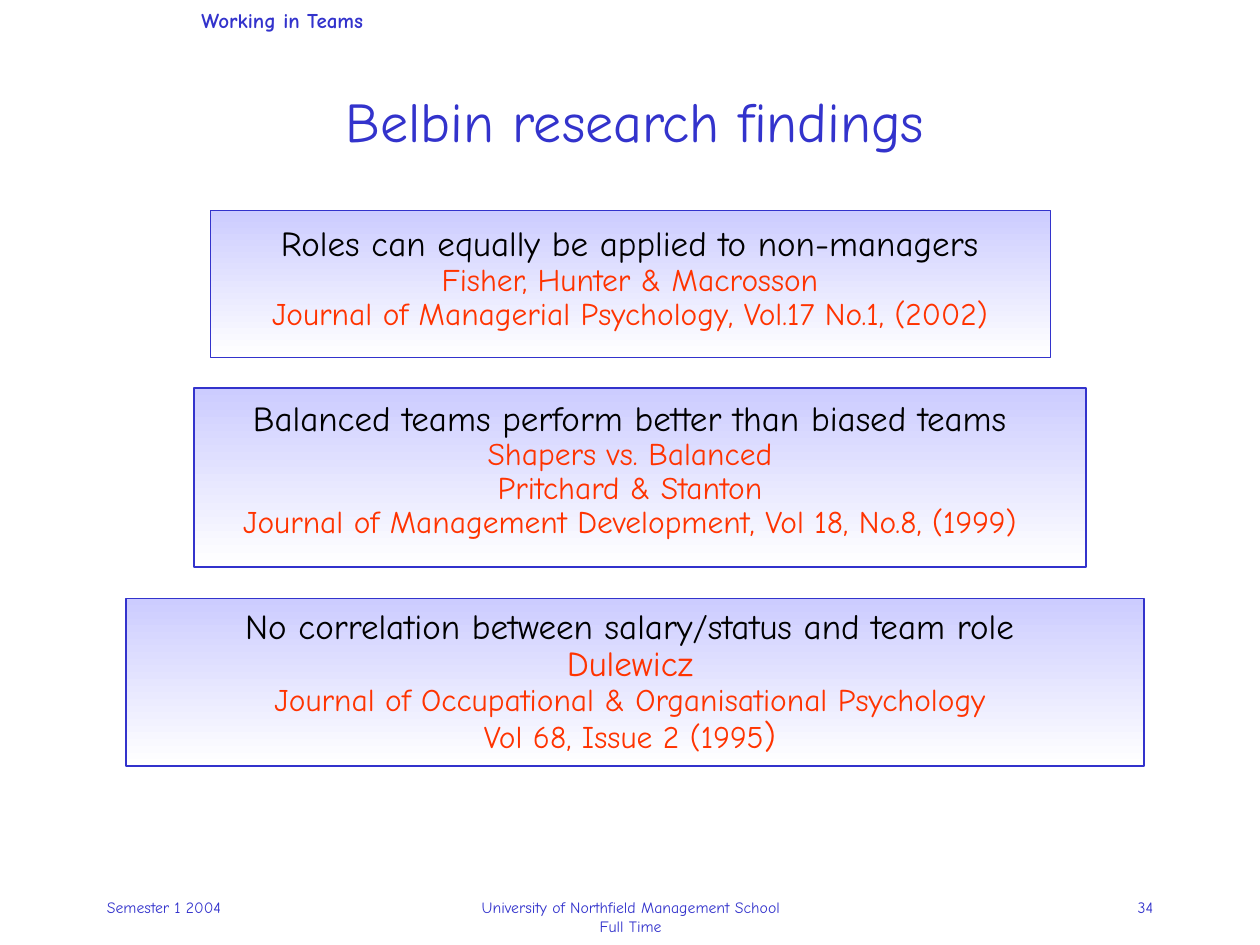
"""Build the slide on Belbin research findings."""
from pptx import Presentation
from pptx.dml.color import RGBColor
from pptx.enum.shapes import MSO_SHAPE as Shape
from pptx.enum.text import MSO_ANCHOR as Anchor, PP_ALIGN as Align
from pptx.util import Inches, Pt

BLUE = RGBColor(0x33, 0x33, 0xCC)
LAVENDER = RGBColor(0xCC, 0xCC, 0xFF)
WHITE = RGBColor(0xFF, 0xFF, 0xFF)
BLACK = RGBColor(0, 0, 0)
RED = RGBColor(0xFF, 0x33, 0)

PANELS = [(1, 4.75, 8.08, 1.33), (1.54, 3.08, 7.08, 1.42), (1.67, 1.67, 6.67, 1.17)]

FINDINGS = [
    ("Roles can equally be applied to non-managers", 4, [
        ("Fisher, Hunter & Macrosson", 18),
        ("Journal of Managerial Psychology, Vol.17 No.1, (2002)", 18)]),
    ("Balanced teams perform better than biased teams", 39, [
        ("Shapers vs. Balanced", 18),
        ("Pritchard & Stanton", 18),
        ("Journal of Management Development, Vol 18, No.8, (1999)", 18)]),
    ("No correlation between salary/status and team role", 39, [
        ("Dulewicz", 20),
        ("Journal of Occupational & Organisational Psychology", 18),
        ("Vol 68, Issue 2 (1995", 18)]),
]


class SlideWriter:
    def __init__(self, page, font="Comic Neue"):
        self.page = page
        self.font = font

    def panel(self, *area):
        box = self.page.shapes.add_shape(Shape.RECTANGLE, *map(Inches, area))
        box.shadow.inherit = False
        box.fill.gradient()
        box.fill.gradient_angle = 270
        for stop, color in zip(box.fill.gradient_stops, (LAVENDER, WHITE)):
            stop.color.rgb = color
        box.line.color.rgb = BLUE
        box.line.width = Pt(0.75)

    def frame(self, *area, wrap=True, anchor=Anchor.TOP):
        box = self.page.shapes.add_textbox(*map(Inches, area))
        box.text_frame.word_wrap = wrap
        box.text_frame.vertical_anchor = anchor
        return box.text_frame

    def paragraph(self, frame, text, size, color=BLUE, align=Align.LEFT, bold=False):
        para = frame.paragraphs[0]
        if para.runs:
            para = frame.add_paragraph()
        para.add_run().text = text
        para.alignment = align
        para.font.name = self.font
        para.font.size = Pt(size)
        para.font.bold = bold
        para.font.color.rgb = color
        return para

    def label(self, area, lines, size, align=Align.LEFT, bold=False, **layout):
        frame = self.frame(*area, **layout)
        for line in lines:
            self.paragraph(frame, line, size, align=align, bold=bold)

    def findings(self, area, findings):
        frame = self.frame(*area)
        for claim, gap, sources in findings:
            para = self.paragraph(frame, claim, 20, BLACK, Align.CENTER)
            para.space_before = Pt(gap)
            para.line_spacing = 0.9
            for source, size in sources:
                para = self.paragraph(frame, source, size, RED, Align.CENTER)
                para.line_spacing = 0.9
        span = para.add_run()
        span.text = ")"
        span.font.size = Pt(20)


def main():
    deck = Presentation()
    deck.slide_width, deck.slide_height = Inches(10), Inches(7.5)
    writer = SlideWriter(deck.slides.add_slide(deck.slide_layouts[6]))

    writer.label((1.5, 0.01, 1.65, 0.3), ["Working in Teams"], 12, bold=True, wrap=False)
    writer.label((0.75, 7.08, 2.08, 0.5), ["Semester 1 2004"], 9)
    writer.label((3.42, 7.08, 3.17, 0.5),
                 ["University of Northfield Management School", "Full Time"],
                 9, Align.CENTER)
    writer.label((7.17, 7.08, 2.08, 0.5), ["34"], 9, Align.RIGHT)
    for area in PANELS:
        writer.panel(*area)
    writer.label((1.58, 0.33, 6.92, 1.25), ["Belbin research findings"], 32,
                 Align.CENTER, anchor=Anchor.MIDDLE)
    writer.findings((0.75, 1.75, 8.5, 4.5), FINDINGS)

    deck.save("out.pptx")


if __name__ == "__main__":
    main()
